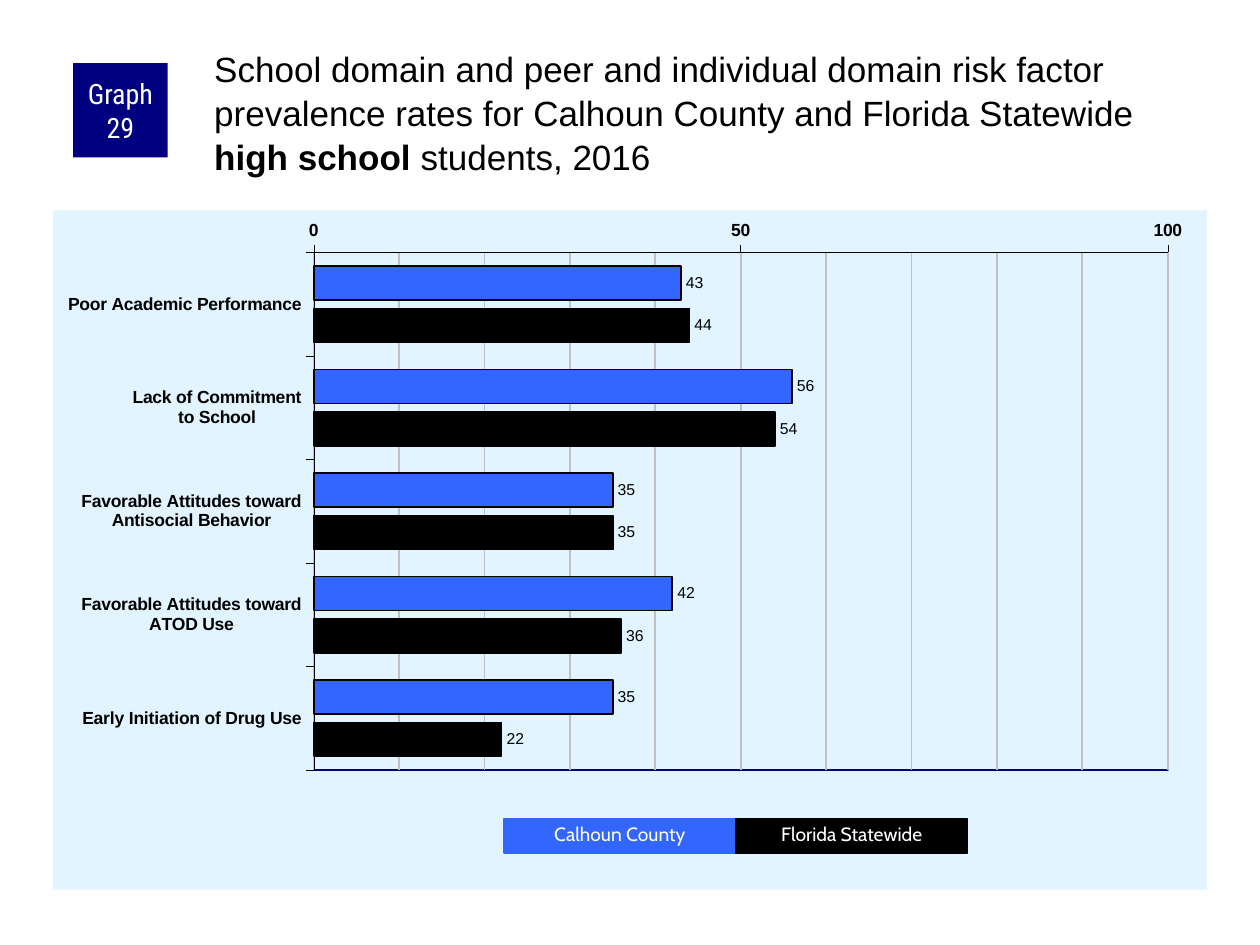
from copy import deepcopy
from dataclasses import dataclass

from pptx import Presentation
from pptx.chart.data import CategoryChartData
from pptx.dml.color import RGBColor
from pptx.enum.chart import (XL_AXIS_CROSSES, XL_CHART_TYPE, XL_LABEL_POSITION,
                             XL_TICK_MARK)
from pptx.enum.shapes import MSO_SHAPE
from pptx.enum.text import MSO_ANCHOR, MSO_AUTO_SIZE, PP_ALIGN
from pptx.oxml import parse_xml
from pptx.oxml.ns import nsdecls, qn
from pptx.util import Inches, Pt


@dataclass(frozen=True)
class Theme:
    """Colours, fonts and type sizes of the slide."""
    navy: str = "000080"
    county: str = "3366FF"
    state: str = "000000"
    panel: str = "E1F4FF"
    grid: str = "C0C0C0"
    ink: str = "000000"
    white: str = "FFFFFF"
    text_font: str = "Arial"
    badge_font: str = "Roboto Condensed"
    legend_font: str = "Cabin"
    title_size: float = 20
    badge_size: float = 16
    legend_size: float = 11
    axis_size: float = 10
    label_size: float = 9


THEME = Theme()
CATEGORIES = [
    "Poor Academic Performance",
    "Lack of Commitment\nto School",
    "Favorable Attitudes toward\nAntisocial Behavior",
    "Favorable Attitudes toward\nATOD Use",
    "Early Initiation of Drug Use",
]
SERIES = [
    ("Calhoun County", THEME.county, (43, 56, 35, 42, 35)),
    ("Florida Statewide", THEME.state, (44, 54, 35, 36, 22)),
]
TITLE = [
    ("School domain and peer and individual domain risk factor prevalence "
     "rates for Calhoun County and Florida Statewide ", False),
    ("high school", True),
    (" students, 2016", False),
]


def style_font(font, size, name=THEME.text_font, color=THEME.ink, bold=False):
    """Set the face, size, colour and weight of a font."""
    font.name, font.size, font.bold = name, Pt(size), bold
    font.color.rgb = RGBColor.from_string(color)


def style_line(line, color, width):
    """Set the colour and point width of a line."""
    line.color.rgb = RGBColor.from_string(color)
    line.width = Pt(width)


def add_span(para, text, **font_format):
    """Append formatted text to a paragraph."""
    span = para.add_run()
    span.text = text
    style_font(span.font, **font_format)


def place(box, left, top, width, height):
    """Move and size a shape in inches."""
    box.left, box.top = Inches(left), Inches(top)
    box.width, box.height = Inches(width), Inches(height)


def set_margins(frame, left, top, right, bottom):
    """Set the text insets in inches."""
    frame.margin_left, frame.margin_top = Inches(left), Inches(top)
    frame.margin_right, frame.margin_bottom = Inches(right), Inches(bottom)


def add_title(page):
    """Fill the title placeholder with the mixed-weight heading."""
    box = page.shapes.title
    place(box, 1.67, 0.33, 7.92, 0.83)
    frame = box.text_frame
    frame.word_wrap, frame.auto_size = True, MSO_AUTO_SIZE.NONE
    frame.vertical_anchor = MSO_ANCHOR.TOP
    set_margins(frame, 0.03, 0.03, 0, 0)
    para = frame.paragraphs[0]
    para.alignment, para.line_spacing = PP_ALIGN.LEFT, 1.05
    for text, bold in TITLE:
        add_span(para, text, size=THEME.title_size, bold=bold)


def add_block(page, text, bounds, fill, size, font, spacing=None):
    """Add a filled rectangle with centred white text."""
    box = page.shapes.add_shape(MSO_SHAPE.RECTANGLE, *map(Inches, bounds))
    box.shadow.inherit = False
    box.fill.solid()
    box.fill.fore_color.rgb = RGBColor.from_string(fill)
    box.line.fill.background()
    box.text_frame.word_wrap = True
    box.text_frame.vertical_anchor = MSO_ANCHOR.MIDDLE
    para = box.text_frame.paragraphs[0]
    para.alignment, para.line_spacing = PP_ALIGN.CENTER, spacing
    add_span(para, text, size=size, name=font, color=THEME.white)
    return box


def add_badge(page):
    """Add the graph number square."""
    box = add_block(page, "Graph 29", (0.58, 0.5, 0.75, 0.75), THEME.navy,
                    THEME.badge_size, THEME.badge_font)
    set_margins(box.text_frame, 0.05, 0, 0.05, 0)


def add_legend(page):
    """Add one key block per series, side by side."""
    width = 1.84
    for index, (name, color, _) in enumerate(SERIES):
        box = add_block(page, name, (4 + index * width, 6.5, width, 0.27),
                        color, THEME.legend_size, THEME.legend_font, 0.9)
        style_line(box.line, color, 0.75)
        box.text_frame.vertical_anchor = MSO_ANCHOR.TOP
        box.text_frame.auto_size = MSO_AUTO_SIZE.SHAPE_TO_FIT_TEXT


def area_format(fill, line):
    """Return chart area properties from fill and line markup."""
    return parse_xml(f'<c:spPr {nsdecls("c", "a")}>{fill}{line}</c:spPr>')


def solid(color):
    """Return solid fill markup."""
    return f'<a:solidFill><a:srgbClr val="{color}"/></a:solidFill>'


def format_areas(chart, x, y, width, height):
    """Colour the chart and plot areas and fix the inner plot position."""
    body = chart.element.find(qn("c:chart"))
    body.addnext(area_format(solid(THEME.panel), "<a:ln><a:noFill/></a:ln>"))
    plot_area = body.find(qn("c:plotArea"))
    for layout in plot_area.findall(qn("c:layout")):
        plot_area.remove(layout)
    values = {"layoutTarget": "inner", "xMode": "edge", "yMode": "edge",
              "x": x, "y": y, "w": width, "h": height}
    marks = "".join(f'<c:{key} val="{value}"/>' for key, value in values.items())
    plot_area.insert(0, parse_xml(
        f'<c:layout {nsdecls("c")}><c:manualLayout>{marks}'
        '</c:manualLayout></c:layout>'))
    plot_area.append(area_format(
        "<a:noFill/>", f'<a:ln w="12700">{solid(THEME.navy)}</a:ln>'))


def format_axes(chart):
    """Style both axes and draw gridlines at every ten."""
    category, value = chart.category_axis, chart.value_axis
    for axis in (category, value):
        style_font(axis.tick_labels.font, THEME.axis_size, bold=True)
        style_line(axis.format.line, THEME.ink, 0.25)
        axis.major_tick_mark = XL_TICK_MARK.OUTSIDE
        axis.minor_tick_mark = XL_TICK_MARK.NONE
    category.reverse_order = True
    category.crosses = XL_AXIS_CROSSES.MAXIMUM
    value.minimum_scale, value.maximum_scale = 0, 100
    value.major_unit, value.minor_unit = 50, 10
    value.has_major_gridlines = value.has_minor_gridlines = True
    style_line(value.major_gridlines.format.line, THEME.grid, 1)
    major = next(chart.element.iter(qn("c:majorGridlines")))
    minor = next(chart.element.iter(qn("c:minorGridlines")))
    minor.append(deepcopy(major.find(qn("c:spPr"))))


def format_series(series, color):
    """Colour a bar series and show its values."""
    series.format.fill.solid()
    series.format.fill.fore_color.rgb = RGBColor.from_string(color)
    style_line(series.format.line, THEME.ink, 1)
    labels = series.data_labels
    labels.show_value, labels.position = True, XL_LABEL_POSITION.OUTSIDE_END
    style_font(labels.font, THEME.label_size)


def add_bar_chart(page):
    """Add the clustered bars comparing county and state rates."""
    data = CategoryChartData()
    data.categories = CATEGORIES
    for name, _, rates in SERIES:
        data.add_series(name, rates)
    chart = page.shapes.add_chart(
        XL_CHART_TYPE.BAR_CLUSTERED,
        *map(Inches, (0.42, 1.67, 9.16, 5.39)), data).chart
    chart.has_title = chart.has_legend = False
    style_font(chart.font, THEME.axis_size)
    plot = chart.plots[0]
    plot.gap_width, plot.overlap, plot.vary_by_categories = 80, -25, False
    for series, (_, color, _) in zip(plot.series, SERIES):
        format_series(series, color)
    format_axes(chart)
    format_areas(chart, 0.226, 0.062, 0.74, 0.762)


def main():
    """Build and save the slide."""
    deck = Presentation()
    deck.slide_width, deck.slide_height = Inches(10), Inches(7.5)
    page = deck.slides.add_slide(deck.slide_layouts[5])
    add_bar_chart(page)
    add_badge(page)
    add_title(page)
    add_legend(page)
    deck.save("out.pptx")


if __name__ == "__main__":
    main()
